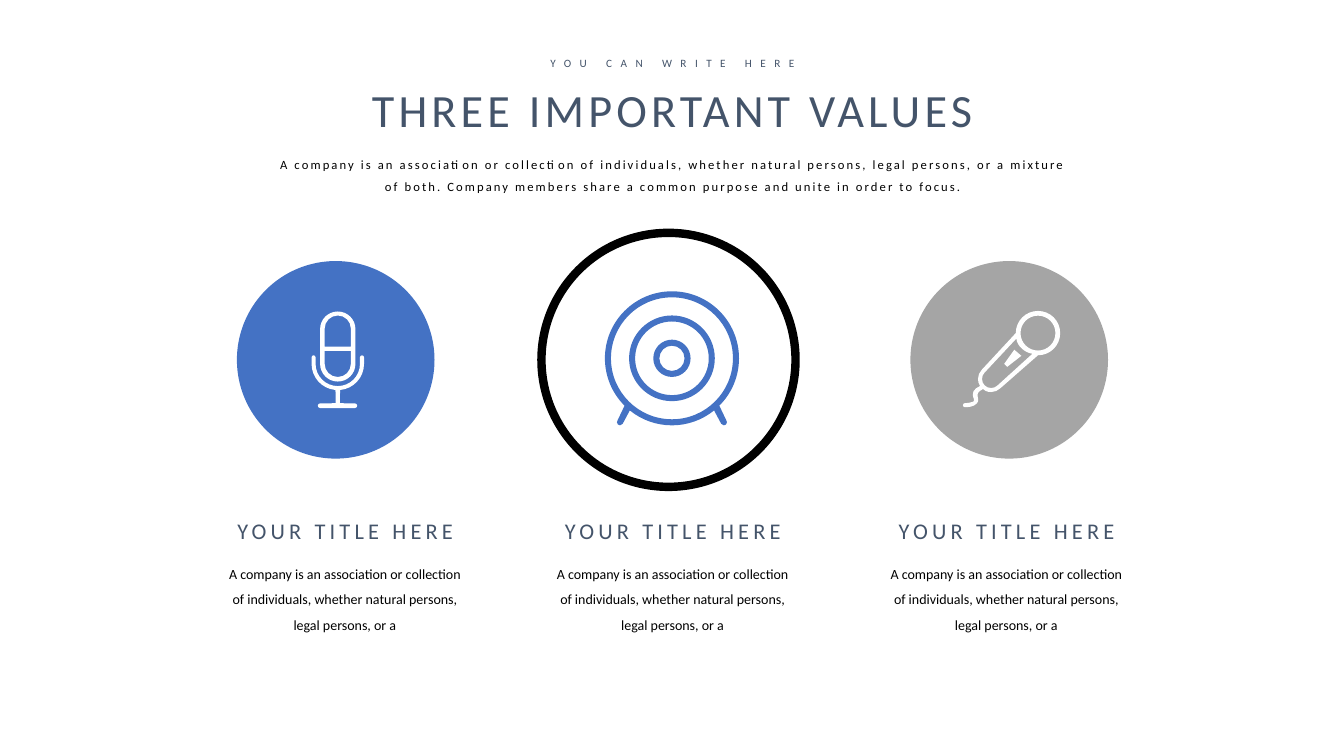
from math import ceil, cos, floor, radians, sin, tan

from pptx import Presentation
from pptx.dml.color import RGBColor
from pptx.enum.shapes import MSO_SHAPE
from pptx.enum.text import MSO_ANCHOR, MSO_AUTO_SIZE, PP_ALIGN
from pptx.oxml.ns import qn
from pptx.util import Inches, Pt

# The slide is a grid of 1333 columns by 750 rows.
COLUMNS, ROWS = 1333, 750
CELL = Inches(0.01)
FINE = 10  # freeform steps per cell
BLUE, GRAY, SLATE, BLACK, WHITE = "4472C4", "A5A5A5", "44546A", "000000", "FFFFFF"

INTRO = ("A company is an association or collection of individuals, whether natural "
         "persons, legal persons, or a mixture of both. Company members share a common "
         "purpose and unite in order to focus.")
VALUE_TITLE = "YOUR TITLE HERE"
VALUE_TEXT = ("A company is an association or collection of individuals, whether natural "
              "persons, legal persons, or a")


def color(hex_string):
    return RGBColor.from_string(hex_string)


def arc(cx, cy, radius, start=0, end=360):
    """Bezier curves from start to end in degrees, clockwise from the right."""
    low, high = min(start, end), max(start, end)
    quarters = [q * 90 for q in range(floor(low / 90) + 1, ceil(high / 90))]
    stops = [low, *quarters, high]
    if start > end:
        stops.reverse()
    curves = []
    for a, b in zip(map(radians, stops), map(radians, stops[1:])):
        pull = 4 / 3 * tan((b - a) / 4)
        unit = [(cos(a), sin(a)), (cos(a) - pull * sin(a), sin(a) + pull * cos(a)),
                (cos(b) + pull * sin(b), sin(b) - pull * cos(b)), (cos(b), sin(b))]
        curves.append([(cx + radius * x, cy + radius * y) for x, y in unit])
    return curves


def corners(*points):
    return [[point] * 4 for point in points]


def studio_microphone():
    capsule = arc(26, 17.5, 17.5, 180, 360) + arc(26, 52, 17.5, 0, 180)
    upper_window = arc(26, 17, 13, 180, 360) + corners((39, 35), (13, 35))
    lower_window = corners((13, 39), (39, 39)) + arc(26, 52, 13, 0, 180)
    cradle_and_foot = (
        arc(26, 52, 26, 0, 85) + corners((28, 91))
        + arc(43, 93.5, 2.3, 270, 450) + arc(8.5, 93.5, 2.3, 90, 270)
        + corners((24, 91)) + arc(26, 52, 26, 95, 180)
        + arc(2, 45.5, 2, 180, 360) + arc(26, 52, 22, 180, 0)
        + arc(50, 45.5, 2, 180, 360))
    return [capsule, upper_window, lower_window, cradle_and_foot]


def target():
    rim_and_legs = (
        arc(66.5, 66.5, 66.5, 135, 405) + arc(118, 130, 3, -30, 150)
        + arc(66.5, 66.5, 66.5, 51, 129) + arc(15, 130, 3, 30, 210))
    return [rim_and_legs] + [arc(66.5, 66.5, radius)
                             for radius in (60.5, 42.5, 36.5, 18.5, 12.5)]


def hand_microphone():
    cord = [
        [(20, 78), (14, 81), (14, 83), (15, 87)],
        [(15, 87), (16, 89), (15, 91), (14, 92)],
        [(14, 92), (11, 96), (4, 96), (2, 96)],
        *arc(2, 94, 2, 90, 270),
        [(2, 92), (5, 92), (10, 91), (11, 90)],
        [(11, 90), (11, 90), (11, 89), (11, 88)],
        [(11, 88), (8, 81), (11, 78), (17, 75)],
    ]
    outline = (arc(74.5, 22.5, 22, 180, 450) + arc(28, 68, 13, 45, 115)
               + cord + arc(28, 68, 13, 148, 225))
    head = arc(74.5, 22.5, 17.3)
    handle = arc(28, 68, 9, 225, 45) + [[(69, 43), (62, 42), (54, 36), (53, 28)]]
    switch = corners((41, 53), (44, 56), (58, 45), (51, 39))
    return [outline, head, handle, switch]


def place(part, left, top, width, height):
    part.left, part.top = int(left * CELL), int(top * CELL)
    part.width, part.height = int(width * CELL), int(height * CELL)


def write(part, text, size, hex_string, spacing=0, lines=1.0, wrap=True):
    frame = part.text_frame
    frame.text = text
    frame.word_wrap = wrap
    frame.auto_size = MSO_AUTO_SIZE.SHAPE_TO_FIT_TEXT
    frame.vertical_anchor = MSO_ANCHOR.TOP
    paragraph = frame.paragraphs[0]
    paragraph.alignment = PP_ALIGN.CENTER
    paragraph.line_spacing = lines
    run = paragraph.runs[0]
    run.font.name, run.font.size = "Calibri", Pt(size)
    run.font.color.rgb = color(hex_string)
    if spacing:
        run._r.get_or_add_rPr().set("spc", str(int(spacing * 100)))


def add_text(slide, box, text, size, hex_string, **options):
    part = slide.shapes.add_textbox(0, 0, 0, 0)
    place(part, *box)
    write(part, text, size, hex_string, **options)


def add_disc(slide, left, top, diameter, fill=None):
    """A filled disc, or a thick black ring when no fill is given."""
    disc = slide.shapes.add_shape(MSO_SHAPE.OVAL, 0, 0, 0, 0)
    place(disc, left, top, diameter, diameter)
    disc.shadow.inherit = False
    if fill:
        disc.fill.solid()
        disc.fill.fore_color.rgb = color(fill)
        disc.line.fill.background()
    else:
        disc.fill.background()
        disc.line.color.rgb = color(BLACK)
        disc.line.width = Pt(6)


def contour_points(curves):
    """The start, then three points per curve; gaps become straight curves."""
    points = [curves[0][0]]
    for first, *rest in curves:
        if first != points[-1]:
            points += [points[-1], first, first]
        if any(point != first for point in rest):
            points += rest
    return [(x * FINE, y * FINE) for x, y in points]


def add_icon(slide, left, top, contours, fill):
    outlines = [contour_points(curves) for curves in contours]
    builder = slide.shapes.build_freeform(*outlines[0][0], scale=CELL / FINE)
    for number, (start, *rest) in enumerate(outlines):
        if number:
            builder.move_to(*start)
        builder.add_line_segments(rest, close=True)
    icon = builder.convert_to_shape(int(left * CELL), int(top * CELL))
    steps = list(icon._element.iter(qn("a:lnTo")))
    for curve, middle, last in zip(steps[::3], steps[1::3], steps[2::3]):
        curve.tag = qn("a:cubicBezTo")
        for step in (middle, last):
            curve.append(step[0])
            step.getparent().remove(step)
    icon.shadow.inherit = False
    icon.fill.solid()
    icon.fill.fore_color.rgb = color(fill)
    icon.line.fill.background()


def add_header(slide, left, top, width):
    def centered(box_width, down, height):
        return left + (width - box_width) / 2, top + down, box_width, height

    place(slide.shapes.title, *centered(627, 25, 66))
    write(slide.shapes.title, "THREE IMPORTANT VALUES", 33, SLATE, spacing=3, wrap=False)
    add_text(slide, centered(343, 0, 24), "YOU CAN WRITE HERE", 8, SLATE, spacing=6)
    add_text(slide, centered(802, 92, 53), INTRO, 9, BLACK, spacing=1.5, lines=1.5)


def add_value(slide, left, top, width, disc, icon, contours, disc_fill, icon_fill):
    """One column: disc (x, y, diameter) and icon (x, y) are offsets in the box."""
    x, y, diameter = disc
    add_disc(slide, left + x, top + y, diameter, disc_fill)
    add_icon(slide, left + icon[0], top + icon[1], contours, icon_fill)
    add_text(slide, (left + 11, top + 277, width - 21, 37), VALUE_TITLE, 16, SLATE,
             spacing=3, wrap=False)
    add_text(slide, (left, top + 317, width, 83), VALUE_TEXT, 10, BLACK, lines=1.5)


def main():
    deck = Presentation()
    deck.slide_width, deck.slide_height = COLUMNS * CELL, ROWS * CELL
    slide = deck.slides.add_slide(deck.slide_layouts[5])
    add_header(slide, 266, 51, 802)
    values = [
        (211, (24, 28, 196), (98, 78), studio_microphone(), BLUE, WHITE),
        (536, (1, 0, 252), (64, 58), target(), None, BLUE),
        (867, (36, 28, 196), (88, 77), hand_microphone(), GRAY, WHITE),
    ]
    for left, *look in values:
        add_value(slide, left, 231, 262, *look)
    deck.save("out.pptx")


if __name__ == "__main__":
    main()
